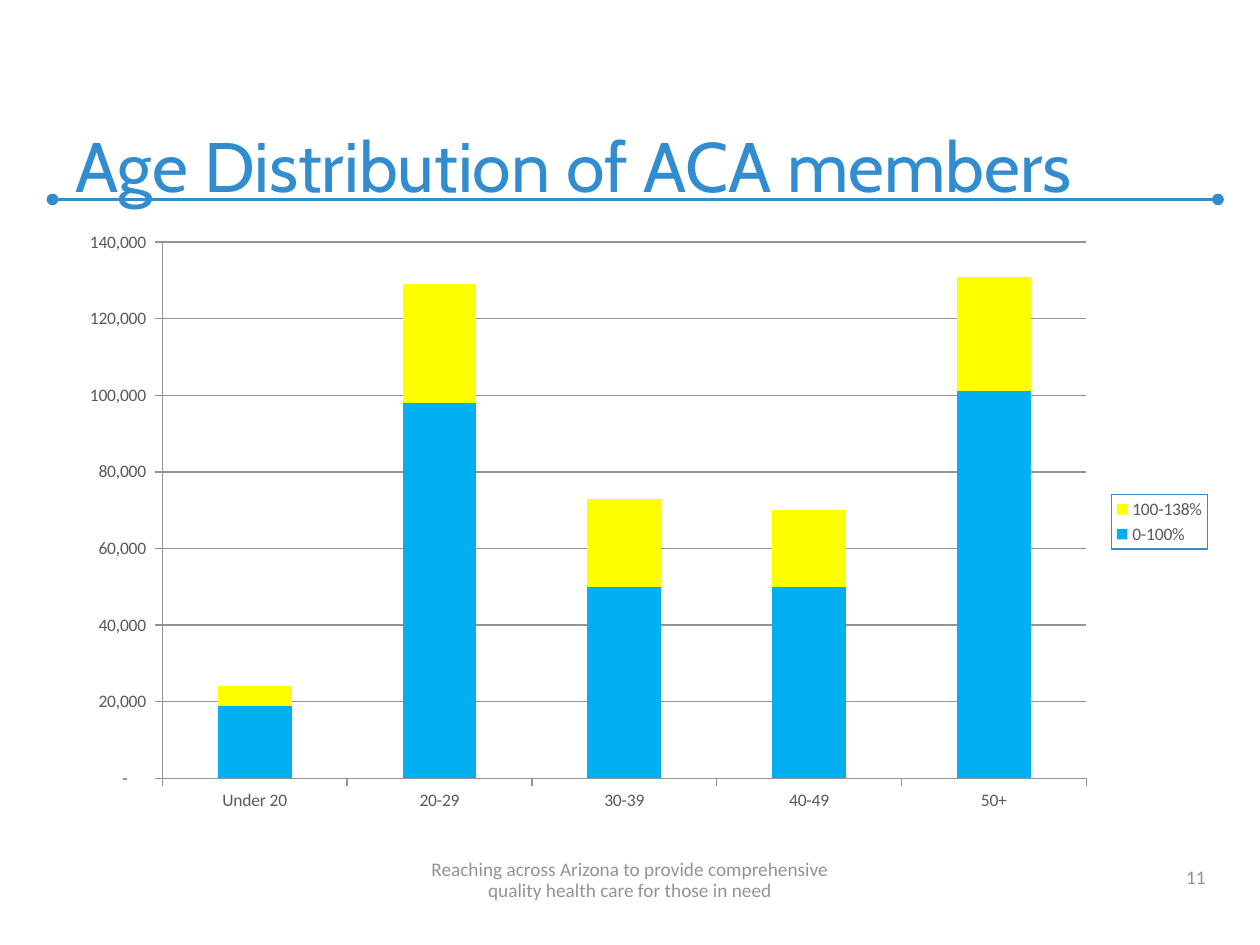
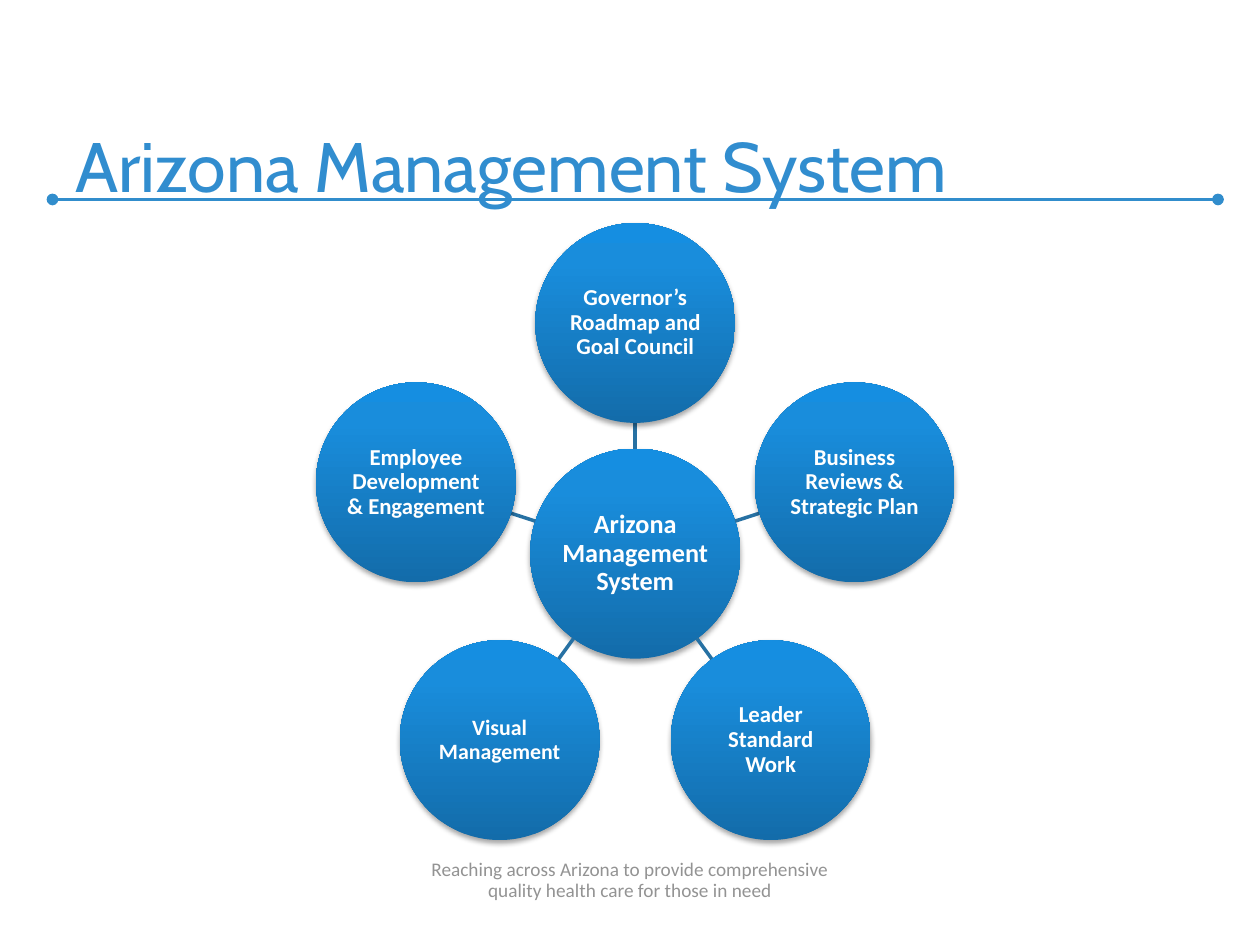
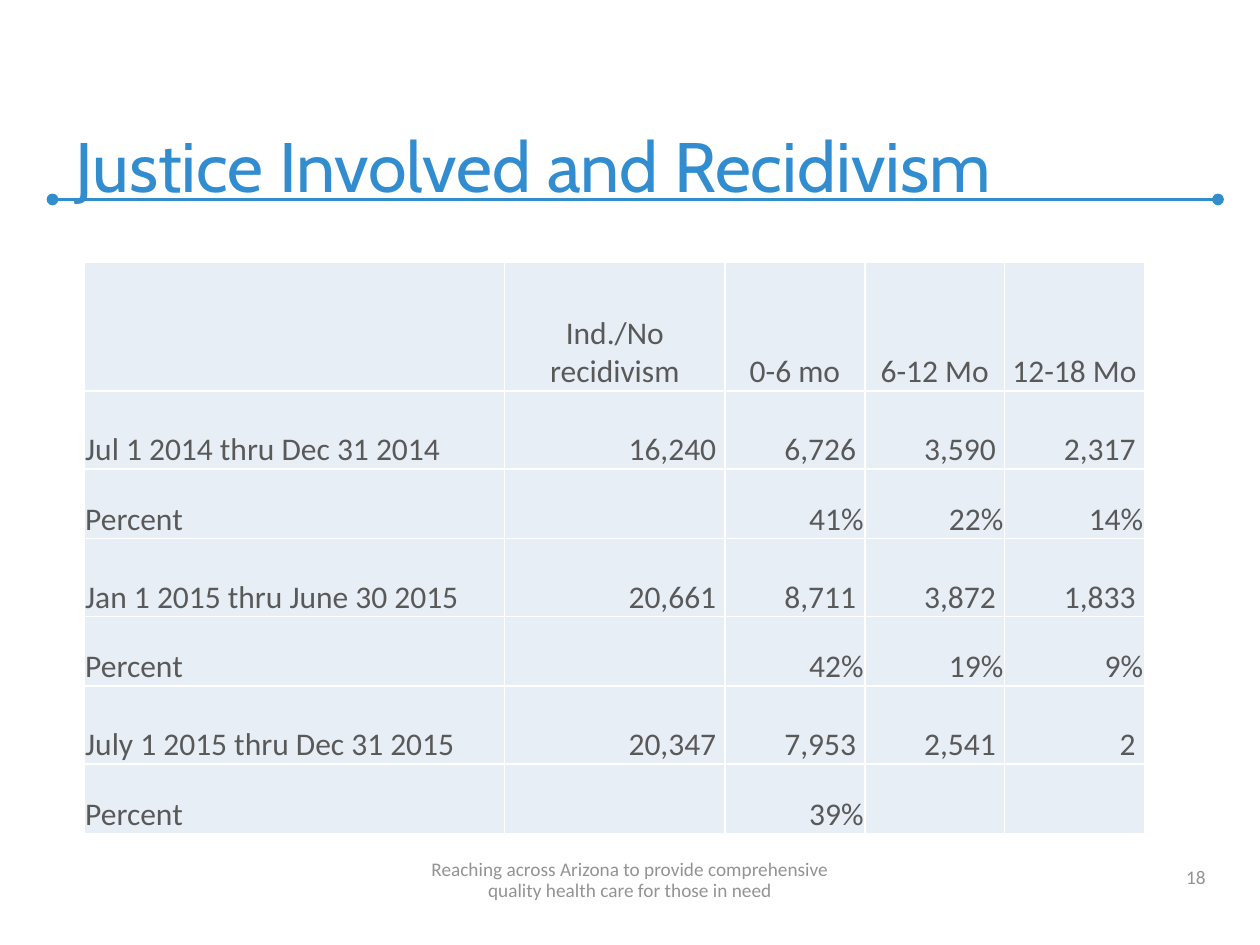
import dataclasses
import math

import lxml.etree
import pptx
import pptx.chart.data
import pptx.dml.color
import pptx.enum.chart
import pptx.enum.shapes
import pptx.enum.text
import pptx.oxml
import pptx.oxml.ns
import pptx.util

ALIGN = pptx.enum.text.PP_ALIGN
ANCHOR = pptx.enum.text.MSO_ANCHOR
COLUMNS, ROWS = 120, 90
CELL = pptx.util.Inches(10) / COLUMNS


@dataclasses.dataclass(frozen=True)
class Theme:
    """Colours, fonts and type sizes of the deck."""
    rule: str = "318DCC"
    title: str = "318DCF"
    muted: str = "939393"
    body: str = "595959"
    white: str = "FFFFFF"
    table_fill: str = "E8EEF6"
    spoke: str = "2771A3"
    gradient: tuple = ((0, "136CAA"), (80, "198DDC"), (100, "158EE1"))
    series: tuple = ("00B0F0", "FFFF00")
    title_font: str = "Cabin"
    body_font: str = "+mn-lt"
    title_size: float = 40
    footer_size: float = 11
    chart_size: float = 10
    table_size: float = 18
    hub_size: float = 15
    satellite_size: float = 13
    small_satellite_size: float = 12.5


THEME = Theme()


@dataclasses.dataclass(frozen=True)
class Box:
    """An area measured in grid columns and rows."""
    left: float
    top: float
    width: float
    height: float

    def emu(self):
        """Return left, top, width and height in EMU."""
        return [grid(value) for value in (self.left, self.top, self.width, self.height)]


TITLE_BOX = Box(6, 4, 109, 16)
RULE_BOX = Box(5, 19, 111, 0)
FOOTER_BOX = Box(0, 81.4, COLUMNS, 5)
NUMBER_BOX = Box(88, 81.4, 28, 3.8)
CHART_BOX = Box(6, 21, 110, 57.4)
DIAGRAM_BOX = Box(30, 21.25, 61, 59)
TABLE_BOX = Box(8, 25, 101, 54.4)

FOOTER = "Reaching across Arizona to provide comprehensive\nquality health care for those in need"
AGES = ("Under 20", "20-29", "30-39", "40-49", "50+")
MEMBERS = {
    "0-100%": (19000, 98000, 50000, 50000, 101000),
    "100-138%": (5000, 31000, 23000, 20000, 30000),
}
SATELLITES = (
    ("Governor’s Roadmap and Goal Council", THEME.satellite_size),
    ("Business Reviews & Strategic Plan", THEME.satellite_size),
    ("Leader Standard Work", THEME.satellite_size),
    ("Visual Management", THEME.small_satellite_size),
    ("Employee Development & Engagement", THEME.satellite_size),
)
RECIDIVISM = (
    ("", "Ind./No recidivism", "0-6 mo", "6-12 Mo", "12-18 Mo"),
    ("Jul 1 2014 thru Dec 31 2014", "16,240", "6,726", "3,590", "2,317"),
    ("Percent", "", "41%", "22%", "14%"),
    ("Jan 1 2015 thru June 30 2015", "20,661", "8,711", "3,872", "1,833"),
    ("Percent", "", "42%", "19%", "9%"),
    ("July 1 2015 thru Dec 31 2015", "20,347", "7,953", "2,541", "2"),
    ("Percent", "", "39%", "", ""),
)


def grid(value):
    """Turn grid units into EMU."""
    return pptx.util.Emu(round(value * CELL))


def rgb(value):
    """Turn a hex string into a colour."""
    return pptx.dml.color.RGBColor.from_string(value)


def drawing_xml(body):
    """Parse one DrawingML element."""
    head, tail = body.split(" ", 1)
    return pptx.oxml.parse_xml(f"{head} {pptx.oxml.ns.nsdecls('a')} {tail}")


def style_font(font, size, color, name=THEME.body_font, bold=False):
    """Set size, colour, typeface and weight."""
    font.size = pptx.util.Pt(size)
    font.name = name
    font.bold = bold
    font.color.rgb = rgb(color)


def write(frame, text, size, color, align=ALIGN.LEFT, name=THEME.body_font, bold=False):
    """Write one formatted paragraph into a text frame and return it."""
    paragraph = frame.paragraphs[0]
    paragraph.text = text
    paragraph.alignment = align
    for run in paragraph.runs:
        style_font(run.font, size, color, name, bold)
    return paragraph


def add_text(slide, box, text, size, color, **options):
    """Add a wrapping, bottom-anchored text box."""
    frame = slide.shapes.add_textbox(*box.emu()).text_frame
    frame.word_wrap = True
    frame.vertical_anchor = ANCHOR.BOTTOM
    return frame, write(frame, text, size, color, **options)


def add_line(slide, start, end, color, width):
    """Add a flat straight connector between two grid points."""
    connector = slide.shapes.add_connector(
        pptx.enum.shapes.MSO_CONNECTOR.STRAIGHT, *map(grid, (*start, *end)))
    connector.line.color.rgb = rgb(color)
    connector.line.width = pptx.util.Pt(width)
    connector._element.spPr.append(drawing_xml("<a:effectLst />"))
    return connector


def add_page(presentation, title, number=None):
    """Add a slide with the shared rule, title, footer and page number."""
    slide = presentation.slides.add_slide(presentation.slide_layouts[6])
    rule = add_line(slide, (RULE_BOX.left, RULE_BOX.top),
                    (RULE_BOX.left + RULE_BOX.width, RULE_BOX.top), THEME.rule, 2.25)
    outline = rule.line._get_or_add_ln()
    for end in ("headEnd", "tailEnd"):
        outline.append(drawing_xml(f'<a:{end} type="oval"/>'))
    frame, _ = add_text(slide, TITLE_BOX, title, THEME.title_size, THEME.title,
                        name=THEME.title_font)
    frame.margin_bottom = pptx.util.Inches(0.03)
    if number:
        add_text(slide, NUMBER_BOX, number, THEME.footer_size, THEME.muted, align=ALIGN.RIGHT)
    _, footer = add_text(slide, FOOTER_BOX, FOOTER, THEME.footer_size, THEME.muted,
                         align=ALIGN.CENTER)
    footer.line_spacing = pptx.util.Pt(12)
    return slide


def add_member_chart(slide, box):
    """Add the stacked columns of members by age and income."""
    data = pptx.chart.data.CategoryChartData()
    data.categories = AGES
    for name, values in MEMBERS.items():
        data.add_series(name, values)
    chart = slide.shapes.add_chart(
        pptx.enum.chart.XL_CHART_TYPE.COLUMN_STACKED, *box.emu(), data).chart
    style_font(chart.font, THEME.chart_size, THEME.body)
    chart.has_title = False
    plot = chart.plots[0]
    plot.gap_width, plot.overlap, plot.vary_by_categories = 150, 100, False
    for series, color in zip(plot.series, THEME.series):
        series.format.fill.solid()
        series.format.fill.fore_color.rgb = rgb(color)
    value_axis = chart.value_axis
    value_axis.minimum_scale, value_axis.maximum_scale, value_axis.major_unit = 0, 140000, 20000
    value_axis.tick_labels.number_format = r'_(* #,##0_);_(* \(#,##0\);_(* "-"??_);_('
    value_axis.tick_labels.number_format_is_linked = False
    value_axis.has_major_gridlines = True
    for item in (value_axis, chart.category_axis, value_axis.major_gridlines):
        item.format.line.color.rgb = rgb(THEME.muted)
        item.format.line.width = pptx.util.Pt(0.75)
    for axis in (value_axis, chart.category_axis):
        axis.major_tick_mark = pptx.enum.chart.XL_TICK_MARK.OUTSIDE
    add_legend(chart)
    place_plot(chart, x=0.086, y=0.036, w=0.8, h=0.89)


def add_legend(chart):
    """Show an outlined legend on the right."""
    chart.has_legend = True
    chart.legend.position = pptx.enum.chart.XL_LEGEND_POSITION.RIGHT
    chart.legend.include_in_layout = False
    style_font(chart.legend.font, THEME.chart_size, THEME.body)
    properties = pptx.oxml.parse_xml(
        f'<c:spPr {pptx.oxml.ns.nsdecls("c", "a")}><a:ln w="9525"><a:solidFill>'
        f'<a:srgbClr val="{THEME.rule}"/></a:solidFill></a:ln></c:spPr>')
    chart.legend._element.find(pptx.oxml.ns.qn("c:txPr")).addprevious(properties)


def place_plot(chart, **shares):
    """Fix the inner plot area as shares of the chart."""
    area = chart._chartSpace.chart.plotArea
    for old in area.findall(pptx.oxml.ns.qn("c:layout")):
        area.remove(old)
    sizes = "".join(f'<c:{key} val="{value}"/>' for key, value in shares.items())
    area.insert(0, pptx.oxml.parse_xml(
        f'<c:layout {pptx.oxml.ns.nsdecls("c")}><c:manualLayout><c:layoutTarget val="inner"/>'
        f'<c:xMode val="edge"/><c:yMode val="edge"/>{sizes}</c:manualLayout></c:layout>'))


def add_disc(slide, center, radius, text, size):
    """Add one shaded disc with a centred label."""
    box = Box(center[0] - radius, center[1] - radius, 2 * radius, 2 * radius)
    shape = slide.shapes.add_shape(pptx.enum.shapes.MSO_SHAPE.OVAL, *box.emu())
    shape.line.fill.background()
    shape.fill.gradient()
    stops = "".join(f'<a:gs pos="{share * 1000}"><a:srgbClr val="{color}"/></a:gs>'
                    for share, color in THEME.gradient)
    properties = shape._element.spPr
    properties.replace(properties.find(pptx.oxml.ns.qn("a:gradFill")), drawing_xml(
        f'<a:gradFill rotWithShape="1"><a:gsLst>{stops}</a:gsLst>'
        '<a:lin ang="16200000" scaled="0"/></a:gradFill>'))
    shape.shadow.inherit = False
    properties.find(pptx.oxml.ns.qn("a:effectLst")).append(drawing_xml(
        f'<a:outerShdw blurRad="{pptx.util.Pt(3.1)}" dist="{pptx.util.Pt(1.8)}" dir="5400000" '
        'rotWithShape="0"><a:srgbClr val="000000"><a:alpha val="35000"/></a:srgbClr>'
        '</a:outerShdw>'))
    frame = shape.text_frame
    frame.word_wrap = True
    frame.vertical_anchor = ANCHOR.MIDDLE
    frame.margin_left = frame.margin_right = pptx.util.Inches(0.01)
    frame.margin_top = frame.margin_bottom = pptx.util.Inches(0.01)
    paragraph = write(frame, text, size, THEME.white, align=ALIGN.CENTER, bold=True)
    paragraph.line_spacing = 0.9


def add_radial_diagram(slide, box):
    """Add a hub with satellites spaced evenly around it."""
    hub_radius, radius, orbit = (share * box.width for share in (0.164, 0.156, 0.36))
    center = (box.left + box.width / 2, box.top + radius + orbit)
    add_disc(slide, center, hub_radius, "Arizona Management System", THEME.hub_size)
    for index, (text, size) in enumerate(SATELLITES):
        angle = math.tau * index / len(SATELLITES) - math.pi / 2

        def at(distance):
            """Return the point at a distance along this spoke."""
            return (center[0] + distance * math.cos(angle),
                    center[1] + distance * math.sin(angle))

        add_line(slide, at(hub_radius), at(orbit - radius), THEME.spoke, 2)
        add_disc(slide, at(orbit), radius, text, size)


def fill_cell(cell, text, align, right_margin):
    """Give a table cell its borders, fill and text."""
    properties = cell._tc.get_or_add_tcPr()
    for side in "LRTB":
        properties.append(drawing_xml(
            f'<a:ln{side} w="12700"><a:solidFill><a:srgbClr val="{THEME.white}"/>'
            f'</a:solidFill></a:ln{side}>'))
    cell.fill.solid()
    cell.fill.fore_color.rgb = rgb(THEME.table_fill)
    cell.vertical_anchor = ANCHOR.BOTTOM
    cell.margin_left = cell.margin_top = pptx.util.Inches(0.01)
    cell.margin_right = pptx.util.Inches(right_margin)
    cell.margin_bottom = 0
    if text:
        write(cell.text_frame, text, THEME.table_size, THEME.body, align=align)


def add_recidivism_table(slide, box):
    """Add the table of counts and percentages by period."""
    widths = (3.34, 1.75, 1.11, 1.11, 1.11)
    heights = (1.02, *(0.62, 0.55) * 3)
    table = slide.shapes.add_table(len(heights), len(widths), *box.emu()).table
    table.first_row = table.horz_banding = False
    for column, width in zip(table.columns, widths):
        column.width = grid(box.width * width / sum(widths))
    for row, height in zip(table.rows, heights):
        row.height = grid(box.height * height / sum(heights))
    for row_index, row in enumerate(RECIDIVISM):
        for column_index, text in enumerate(row):
            is_number = row_index > 0 and column_index > 0
            if is_number:
                align = ALIGN.RIGHT
            else:
                align = ALIGN.LEFT if column_index == 0 else ALIGN.CENTER
            right_margin = 0.07 if is_number and "%" not in text else 0.01
            fill_cell(table.cell(row_index, column_index), text, align, right_margin)


def main():
    """Build and save the deck."""
    presentation = pptx.Presentation()
    presentation.slide_width, presentation.slide_height = grid(COLUMNS), grid(ROWS)
    add_member_chart(add_page(presentation, "Age Distribution of ACA members", "11"), CHART_BOX)
    add_radial_diagram(add_page(presentation, "Arizona Management System"), DIAGRAM_BOX)
    add_recidivism_table(add_page(presentation, "Justice Involved and Recidivism", "18"),
                         TABLE_BOX)
    presentation.save("out.pptx")


if __name__ == "__main__":
    main()
